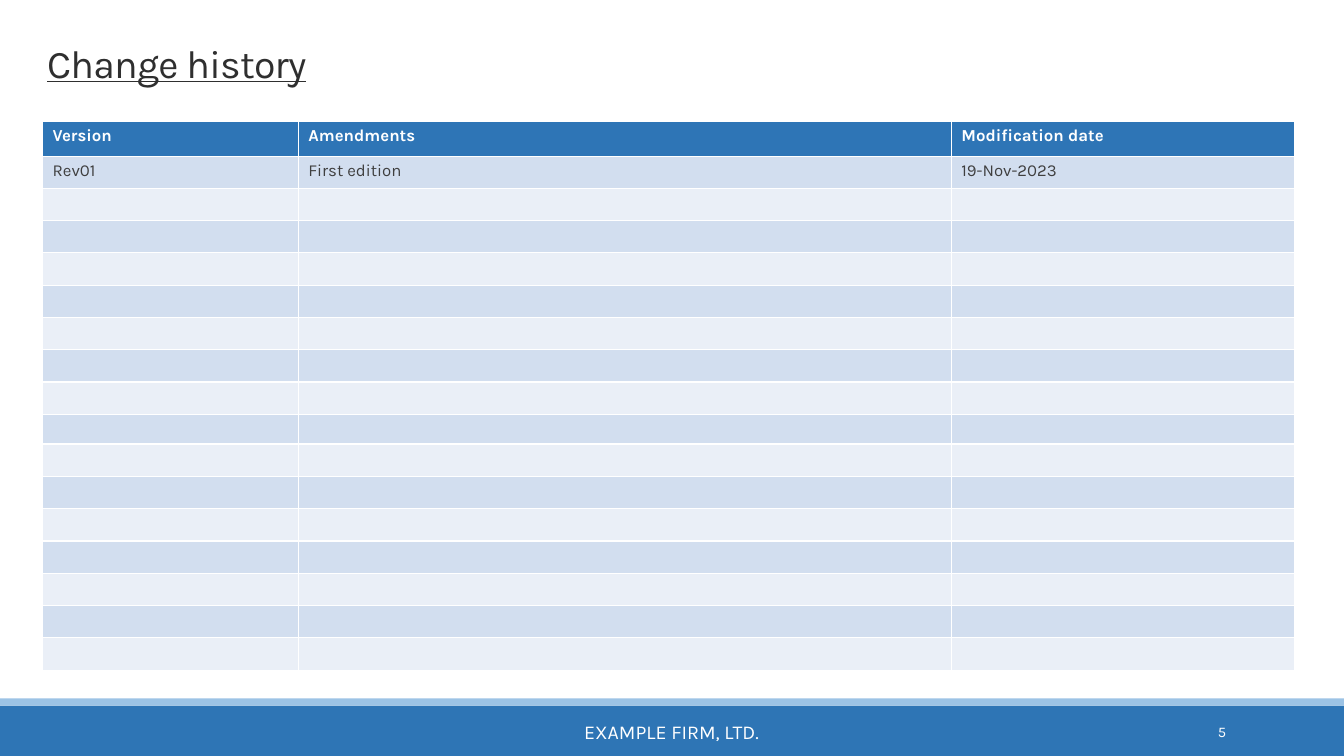
from dataclasses import dataclass

from lxml.etree import SubElement
from pptx import Presentation
from pptx.dml.color import RGBColor
from pptx.enum.shapes import MSO_SHAPE
from pptx.enum.text import MSO_ANCHOR, PP_ALIGN
from pptx.oxml.ns import qn
from pptx.util import Pt


@dataclass(frozen=True)
class Theme:
    font: str = "Karla"
    bar: str = "2E75B5"
    stripe: str = "9CC3E5"
    header: str = "2E75B6"
    odd_row: str = "D2DEEF"
    even_row: str = "EAEFF7"
    white: str = "FFFFFF"
    title_ink: str = "2F2F2F"
    cell_ink: str = "3F3F3F"
    title_size: float = 28
    footer_size: float = 14
    number_size: float = 10.5
    cell_size: float = 12
    empty_size: float = 10


class SlideBuilder:
    def __init__(self, page, theme):
        self.page = page
        self.theme = theme

    def bar(self, left, top, width, height, color):
        bar = self.page.shapes.add_shape(
            MSO_SHAPE.RECTANGLE, Pt(left), Pt(top), Pt(width), Pt(height))
        bar.shadow.inherit = False
        bar.fill.solid()
        bar.fill.fore_color.rgb = RGBColor.from_string(color)
        bar.line.fill.background()

    def span(self, para, text, size, color, bold=False):
        span = para.add_run()
        span.text = text
        span.font.name = self.theme.font
        span.font.size = Pt(size)
        span.font.bold = bold
        span.font.color.rgb = RGBColor.from_string(color)
        return span

    def text(self, left, top, width, height, text, size, color, align, anchor):
        box = self.page.shapes.add_textbox(Pt(left), Pt(top), Pt(width), Pt(height))
        frame = box.text_frame
        frame.word_wrap = True
        frame.vertical_anchor = anchor
        para = frame.paragraphs[0]
        para.alignment = align
        return para, self.span(para, text, size, color)

    def title(self, left, top, width, height, text):
        para, span = self.text(left, top, width, height, text, self.theme.title_size,
                               self.theme.title_ink, PP_ALIGN.LEFT, MSO_ANCHOR.BOTTOM)
        para.line_spacing = 0.85
        span.font.underline = True
        span.font._element.set("spc", "-50")

    def border(self, cell, side, width):
        line = SubElement(cell._tc.get_or_add_tcPr(), qn(f"a:ln{side}"), w=str(Pt(width)))
        fill = SubElement(line, qn("a:solidFill"))
        SubElement(fill, qn("a:srgbClr"), val=self.theme.white)

    def cell(self, cell, row, text):
        theme = self.theme
        widths = {"L": 1, "R": 1, "T": 0.25 if row == 1 else 1, "B": 0.25 if row == 0 else 1}
        for side, width in widths.items():
            self.border(cell, side, width)
        banding = theme.odd_row if row % 2 else theme.even_row
        cell.fill.solid()
        cell.fill.fore_color.rgb = RGBColor.from_string(banding if row else theme.header)
        para = cell.text_frame.paragraphs[0]
        if text:
            ink = theme.cell_ink if row else theme.white
            self.span(para, text, theme.cell_size, ink, bold=row == 0)
        else:
            end = para._p.get_or_add_endParaRPr()
            end.set("sz", str(int(theme.empty_size * 100)))

    def table(self, left, top, widths, heights, records):
        frame = self.page.shapes.add_table(
            len(heights), len(widths), Pt(left), Pt(top), Pt(sum(widths)), Pt(sum(heights)))
        table = frame.table
        for column, width in zip(table.columns, widths):
            column.width = Pt(width)
        for index, height in enumerate(heights):
            table.rows[index].height = Pt(height)
            record = records[index] if index < len(records) else [""] * len(widths)
            for column, text in enumerate(record):
                self.cell(table.cell(index, column), index, text)


def main():
    theme = Theme()
    deck = Presentation()
    deck.slide_width, deck.slide_height = Pt(960), Pt(540)
    page = deck.slides.add_slide(deck.slide_layouts[6])
    builder = SlideBuilder(page, theme)

    builder.bar(0, 504, 960, 36, theme.bar)
    builder.bar(0, 498.8, 960, 5.2, theme.stripe)
    builder.text(290, 508.5, 379.5, 28.8, "EXAMPLE FIRM, LTD.", theme.footer_size,
                 theme.white, PP_ALIGN.CENTER, MSO_ANCHOR.MIDDLE)
    builder.text(779.8, 508.5, 103, 28.8, "5", theme.number_size,
                 theme.white, PP_ALIGN.RIGHT, MSO_ANCHOR.MIDDLE)
    builder.title(26.6, 13, 907.2, 52.6, "Change history")

    records = [
        ["Version", "Amendments", "Modification date"],
        ["Rev01", "First edition", "19-Nov-2023"],
    ]
    heights = [25] + [23.1] * 8 + [21.2] + [23.1] * 7
    builder.table(30.4, 86.4, [182.7, 466.5, 244.8], heights, records)
    deck.save("out.pptx")


if __name__ == "__main__":
    main()
